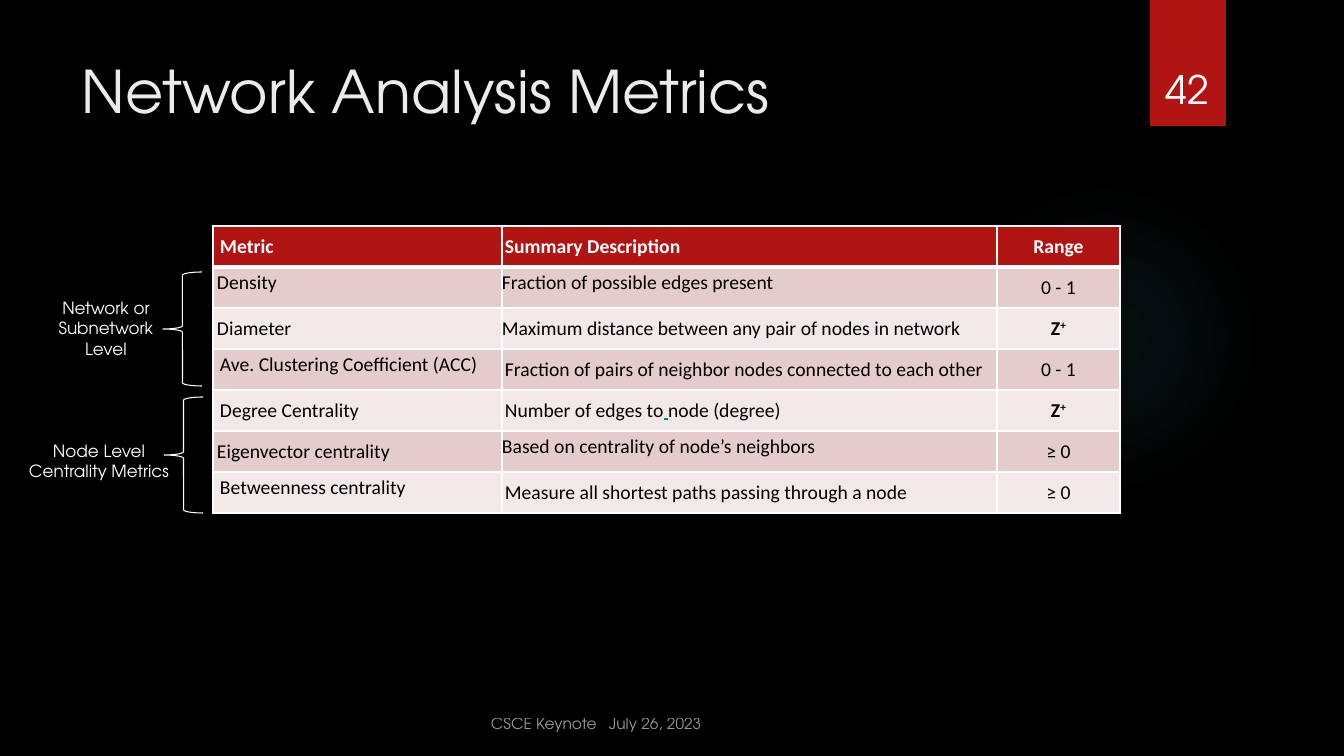
"""Build the Network Analysis Metrics slide."""
import pptx
import pptx.util
import pptx.dml.color
import pptx.enum.shapes
import pptx.enum.text
import pptx.oxml
import pptx.oxml.ns
from lxml import etree

RGBColor = pptx.dml.color.RGBColor
SHAPE = pptx.enum.shapes.MSO_SHAPE
ALIGN = pptx.enum.text.PP_ALIGN
ANCHOR = pptx.enum.text.MSO_ANCHOR
Pt = pptx.util.Pt
qn = pptx.oxml.ns.qn

BLACK = RGBColor(0x00, 0x00, 0x00)
WHITE = RGBColor(0xFF, 0xFF, 0xFF)
TITLE = RGBColor(0xEB, 0xEB, 0xEB)
RED = RGBColor(0xB0, 0x15, 0x13)
ROSE = RGBColor(0xE4, 0xCC, 0xCC)
PALE = RGBColor(0xF2, 0xE8, 0xE7)
TEAL = RGBColor(0x00, 0x80, 0x80)
GLOW = RGBColor(0x50, 0xB9, 0xC1)
NS = pptx.oxml.ns.nsdecls("a")


def px(*lengths):
    return [round(n * 914400 / 100.8) for n in lengths]


def add_text(box, text, size, color, align=ALIGN.LEFT, anchor=ANCHOR.TOP):
    tf = s.shapes.add_textbox(*px(*box)).text_frame
    tf.word_wrap = True
    tf.vertical_anchor = anchor
    p = tf.paragraphs[0]
    p.text = text
    p.alignment = align
    f = p.runs[0].font
    f.name, f.size, f.color.rgb = "TeX Gyre Adventor", Pt(size), color
    return p


prs = pptx.Presentation()
prs.slide_width, prs.slide_height = px(1344, 756)
s = prs.slides.add_slide(prs.slide_layouts[6])
s.background.fill.solid()
s.background.fill.fore_color.rgb = BLACK

glow = s.shapes.add_shape(SHAPE.OVAL, *px(949, 184, 310, 310))
glow.shadow.inherit = False
glow.line.fill.background()
stops = "".join(
    f'<a:gs pos="{pos}000"><a:srgbClr val="{GLOW}"><a:alpha val="{alpha}000"/></a:srgbClr></a:gs>'
    for pos, alpha in [(0, 7), (36, 6), (69, 0)])
glow.fill.background()
no_fill = glow._element.spPr.find(qn("a:noFill"))
no_fill.addprevious(pptx.oxml.parse_xml(
    f'<a:gradFill {NS}><a:gsLst>{stops}</a:gsLst><a:path path="circle">'
    '<a:fillToRect l="50000" t="50000" r="50000" b="50000"/></a:path></a:gradFill>'))
glow._element.spPr.remove(no_fill)

tab = s.shapes.add_shape(SHAPE.RECTANGLE, *px(1150, 0, 76, 126))
tab.shadow.inherit = False
tab.fill.solid()
tab.fill.fore_color.rgb = RED
tab.line.fill.background()

add_text((72, 50, 1037, 154), "Network Analysis Metrics", 42, TITLE)

rows = [
    ("Metric", ["Summary Description"], "Range", 3),
    ("Density", ["Fraction of possible edges present"], "0 - 1", 0),
    ("Diameter", ["Maximum distance between any pair of nodes in network"], "Z+", 0),
    ("Ave. Clustering Coefficient (ACC)",
     ["Fraction of pairs of neighbor nodes connected to each other"], "0 - 1", 3),
    ("Degree Centrality", ["Number of edges to", " ", "node (degree)"], "Z+", 3),
    ("Eigenvector centrality", ["Based on centrality of node’s neighbors"], "≥ 0", 0),
    ("Betweenness centrality", ["Measure all shortest paths passing through a node"], "≥ 0", 3),
]
tight_cells = {(1, 0), (1, 1), (3, 0), (5, 1), (6, 0)}
tbl = s.shapes.add_table(len(rows), 3, *px(213, 226, 907, 287)).table
for col, width in zip(tbl.columns, px(289, 495, 123)):
    col.width = width
for i, (metric, description, value, inset) in enumerate(rows):
    tbl.rows[i].height = px(41)[0]
    is_set = value == "Z+"
    for j, texts in enumerate([[metric], description, list(value) if is_set else [value]]):
        cell = tbl.cell(i, j)
        cell.margin_left, cell.margin_right = px(inset + (4 if j == 0 else 0), inset)
        cell.margin_top = cell.margin_bottom = 0
        cell.vertical_anchor = ANCHOR.MIDDLE
        for side in "LRTB":
            width = 3 if (i, side) in {(0, "B"), (1, "T")} else 1
            cell._tc.get_or_add_tcPr().append(pptx.oxml.parse_xml(
                f'<a:ln{side} {NS} w="{Pt(width)}"><a:solidFill>'
                f'<a:srgbClr val="{WHITE}"/></a:solidFill></a:ln{side}>'))
        cell.fill.solid()
        cell.fill.fore_color.rgb = RED if i == 0 else ROSE if i % 2 else PALE
        p = cell.text_frame.paragraphs[0]
        p.alignment = ALIGN.CENTER if j == 2 else ALIGN.LEFT
        if (i, j) in tight_cells:
            p.line_spacing = Pt(10)
        for text in texts:
            r = p.add_run()
            r.text = text
            r.font.name, r.font.size = "Calibri", Pt(14)
            r.font.bold = i == 0 or (j == 2 and is_set)
            r.font.color.rgb = WHITE if i == 0 else BLACK
            if text == "+":
                r.font._element.set("baseline", "30000")
            if text == " ":
                r.font.underline = True
                r.font.color.rgb = TEAL

for box in [(163, 272, 39, 114), (164, 397, 39, 116)]:
    brace = s.shapes.add_shape(SHAPE.LEFT_BRACE, *px(*box))
    brace.shadow.inherit = False
    brace.fill.background()
    brace.line.color.rgb = WHITE
    brace.line.width = Pt(0.75)

add_text((45, 293, 122, 72), "Network or Subnetwork Level", 12, WHITE, ALIGN.CENTER)
add_text((17, 436, 164, 50), "Node Level Centrality Metrics", 12, WHITE, ALIGN.CENTER)
add_text((1141, 32, 93, 85), "42", 28, WHITE, ALIGN.CENTER, ANCHOR.BOTTOM)

footer = add_text((481, 705, 425, 33), "CSCE Keynote\tJuly 26, 2023", 11, WHITE, anchor=ANCHOR.BOTTOM)
tabs = etree.SubElement(footer._p.get_or_add_pPr(), qn("a:tabLst"))
etree.SubElement(tabs, qn("a:tab"), pos=str(px(118)[0]), algn="l")
for color in footer._p.iter(qn("a:srgbClr")):
    etree.SubElement(color, qn("a:alpha"), val="60000")

prs.save("out.pptx")
